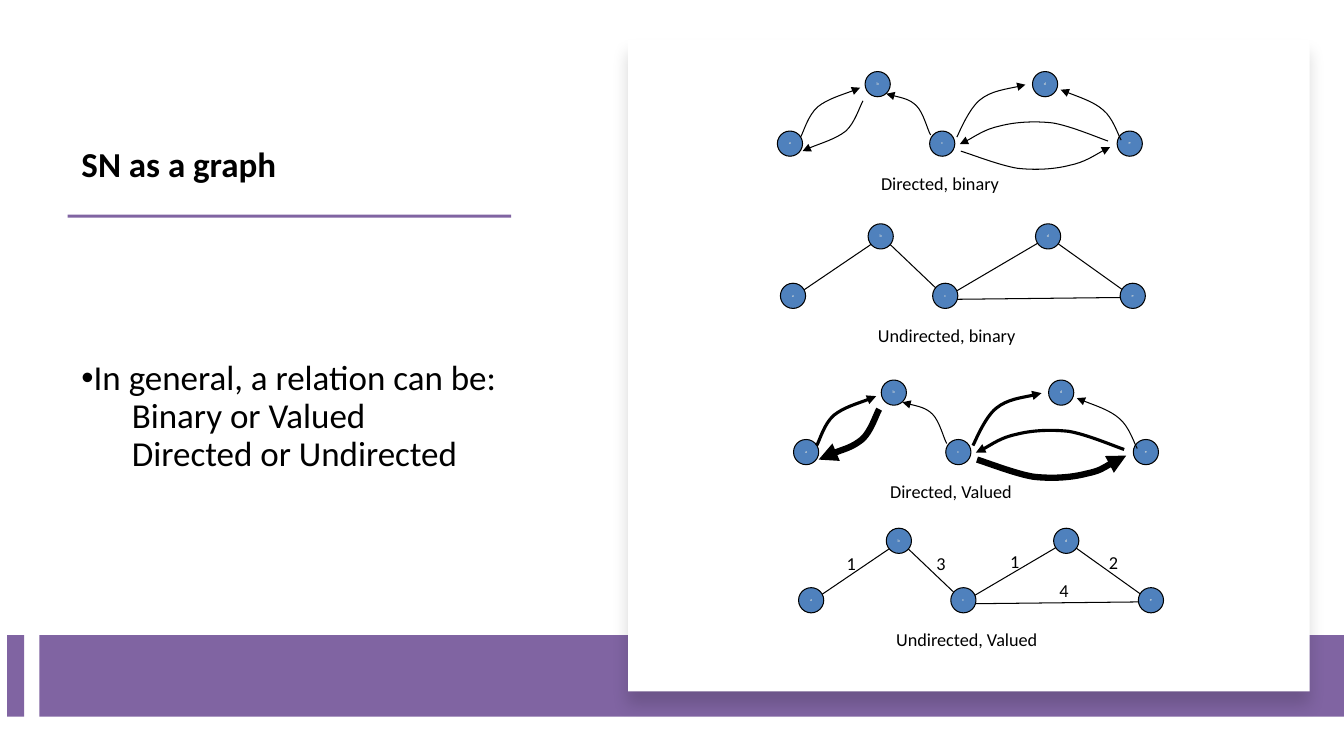
from lxml import etree
from pptx import Presentation
from pptx.dml.color import RGBColor
from pptx.enum.shapes import MSO_SHAPE
from pptx.enum.text import MSO_ANCHOR, PP_ALIGN
from pptx.oxml.ns import qn
from pptx.util import Pt

EMU_PER_PX = 9144  # 100 px to the inch
RECT, OVAL = MSO_SHAPE.RECTANGLE, MSO_SHAPE.OVAL
TOP, MIDDLE, BOTTOM = MSO_ANCHOR.TOP, MSO_ANCHOR.MIDDLE, MSO_ANCHOR.BOTTOM
CENTER = PP_ALIGN.CENTER

COLORS = {"ink": "000000", "panel": "FFFFFF", "accent": "8064A2",
          "node": "4F81BD", "node_label": "EEECE1"}
FONT = "Calibri"
THIN, MEDIUM, THICK = 0.75, 2.25, 4.5

# Points below are measured from each graph's own left and top
NODE_SIZE = 25
NODES = {"a": (0, 59), "b": (87, 0), "c": (151, 59), "e": (337, 59), "d": (253, 0)}
TIES = [(14, 72), (101, 13), (164, 73), (266, 13), (350, 73), (167, 75)]
# Start point, then three Bezier points for every curve section
ARROWS = {
    "ab": [(23, 65), (26, 60), (30, 44), (40, 35), (50, 27), (74, 20), (82, 16)],
    "ba": [(85, 29), (82, 34), (77, 51), (68, 59), (58, 67), (34, 74), (25, 79)],
    "cd": [(178, 65), (181, 59), (190, 37), (201, 28), (212, 19), (236, 16), (246, 13)],
    "ce": [(182, 79), (192, 82), (220, 93), (238, 96), (256, 98),
           (275, 97), (290, 93), (305, 90), (321, 79), (330, 75)],
    "ed": [(341, 68), (338, 63), (333, 46), (323, 38), (314, 30), (290, 22), (281, 18)],
    "ec": [(328, 69), (319, 66), (291, 54), (273, 51), (255, 49),
           (236, 50), (221, 54), (206, 57), (189, 69), (181, 72)],
    "cb": [(152, 63), (149, 58), (145, 41), (138, 34), (131, 27), (114, 24), (108, 22)],
}
ARROW_VALUES = {"ab": MEDIUM, "ba": THICK, "cd": MEDIUM, "ce": THICK, "ec": MEDIUM}
TIE_VALUES = [("1", 38, 21), ("3", 127, 21), ("4", 249, 48), ("2", 298, 20), ("1", 200, 19)]


def px(*lengths):
    return [length * EMU_PER_PX for length in lengths]


def rgb(name):
    return RGBColor.from_string(COLORS[name])


def set_text(shape, text, size, color="ink", anchor=TOP, wrap=True, bold=False):
    frame = shape.text_frame
    frame.word_wrap = wrap
    frame.vertical_anchor = anchor
    paragraph = frame.paragraphs[0]
    paragraph.text = text
    paragraph.line_spacing = 0.9
    paragraph.font.name = FONT
    paragraph.font.size = Pt(size)
    paragraph.font.bold = bold
    paragraph.font.color.rgb = rgb(color)
    return paragraph


def add_label(slide, text, box, size=13, **style):
    return set_text(slide.shapes.add_textbox(*px(*box)), text, size, **style)


def add_block(slide, kind, box, fill):
    block = slide.shapes.add_shape(kind, *px(*box))
    block.shadow.inherit = False
    block.fill.solid()
    block.fill.fore_color.rgb = rgb(fill)
    block.line.fill.background()
    return block


def set_line(shape, width):
    shape.line.color.rgb = rgb("ink")
    shape.line.width = Pt(width)


def add_outline(slide, points, origin, width):
    (start_x, start_y), *others = [(origin[0] + x, origin[1] + y) for x, y in points]
    builder = slide.shapes.build_freeform(start_x, start_y, scale=EMU_PER_PX)
    builder.add_line_segments(others, close=False)
    outline = builder.convert_to_shape()
    outline.shadow.inherit = False
    outline.fill.background()
    set_line(outline, width)
    return outline


def add_arrow(slide, points, origin, width):
    arrow = add_outline(slide, points, origin, width)
    # Turn every three straight segments into one Bezier section
    track = arrow.element.find(".//" + qn("a:path"))
    segments = track.findall(qn("a:lnTo"))
    for first in range(0, len(segments), 3):
        curve = etree.SubElement(track, qn("a:cubicBezTo"))
        for segment in segments[first:first + 3]:
            curve.append(segment[0])
            track.remove(segment)
    line = arrow.element.find(".//" + qn("a:ln"))
    etree.SubElement(line, qn("a:tailEnd"), type="triangle")


def add_nodes(slide, origin):
    for name, (x, y) in NODES.items():
        box = (origin[0] + x, origin[1] + y, NODE_SIZE, NODE_SIZE)
        node = add_block(slide, OVAL, box, "node")
        set_line(node, THIN)
        letter = set_text(node, name, 3, "node_label", MIDDLE, wrap=False)
        letter.alignment = CENTER


def add_directed_graph(slide, origin, values):
    add_nodes(slide, origin)
    for pair, points in ARROWS.items():
        add_arrow(slide, points, origin, values.get(pair, THIN))


def add_undirected_graph(slide, origin, values):
    add_outline(slide, TIES, origin, THIN)
    add_nodes(slide, origin)
    for value, x, y in values:
        add_label(slide, value, (origin[0] + x, origin[1] + y, 27, 30), wrap=False)


def add_panel(slide):
    panel = add_block(slide, RECT, (623, 39, 676, 647), "panel")
    effects = panel.element.spPr.find(qn("a:effectLst"))
    shadow = etree.SubElement(effects, qn("a:outerShdw"), blurRad=str(Pt(11)),
                              dist=str(Pt(10)), dir="5400000", algn="t", rotWithShape="0")
    color = etree.SubElement(shadow, qn("a:srgbClr"), val=COLORS["ink"])
    etree.SubElement(color, qn("a:alpha"), val="15000")


def add_relation_text(slide):
    relation = add_label(
        slide, "In general, a relation can be:\v\tBinary or Valued\v\tDirected or Undirected",
        (71, 222, 468, 384), 25, anchor=MIDDLE)
    properties = relation._p.get_or_add_pPr()
    properties.set("marL", "0")
    properties.set("indent", str(-25 * EMU_PER_PX))
    etree.SubElement(properties, qn("a:buFont"), typeface="Arial")
    bullet = etree.SubElement(properties, qn("a:buChar"), char="•")
    # Bullet settings come before the default run properties
    defaults = properties.find(qn("a:defRPr"))
    if defaults is not None:
        bullet.addnext(defaults)


def main():
    deck = Presentation()
    deck.slide_width, deck.slide_height = px(1333, 750)
    slide = deck.slides.add_slide(deck.slide_layouts[6])

    # Heading and statement
    add_label(slide, "SN as a graph", (71, 58, 468, 131), 25, anchor=BOTTOM, bold=True)
    add_block(slide, RECT, (67, 213, 440, 3), "accent")
    add_relation_text(slide)

    # Bottom band and white panel
    for left, width in ((7, 17), (39, 1294)):
        add_block(slide, RECT, (left, 630, width, 81), "accent")
    add_panel(slide)

    # Four kinds of graph
    add_directed_graph(slide, (771, 71), {})
    add_undirected_graph(slide, (774, 222), [])
    add_directed_graph(slide, (787, 377), ARROW_VALUES)
    add_undirected_graph(slide, (792, 524), TIE_VALUES)
    for caption, left, top in (("Directed, binary", 864, 168), ("Undirected, binary", 861, 319),
                               ("Directed, Valued", 873, 474), ("Undirected, Valued", 879, 621)):
        add_label(slide, caption, (left, top, 173, 33))

    deck.save("out.pptx")


if __name__ == "__main__":
    main()
